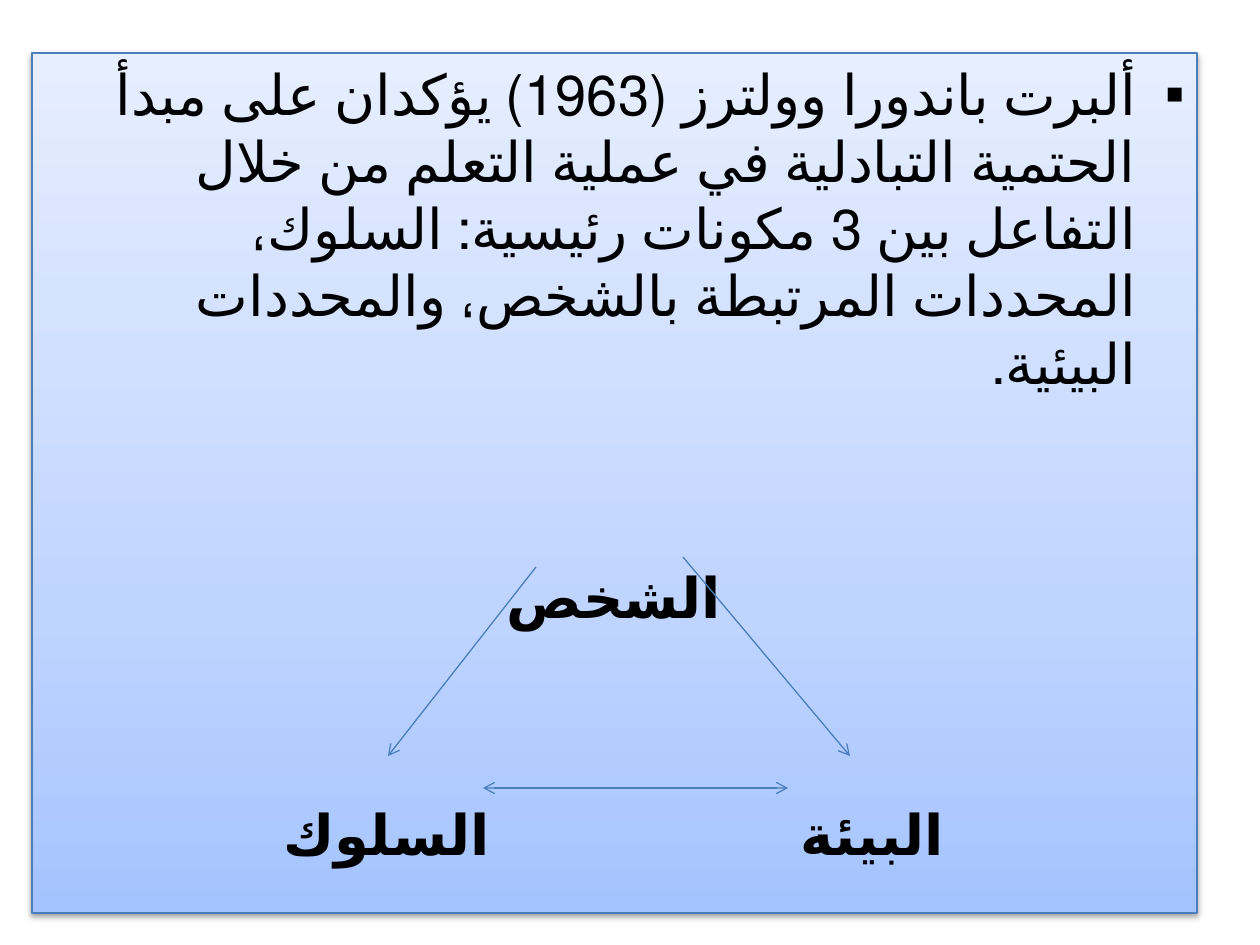
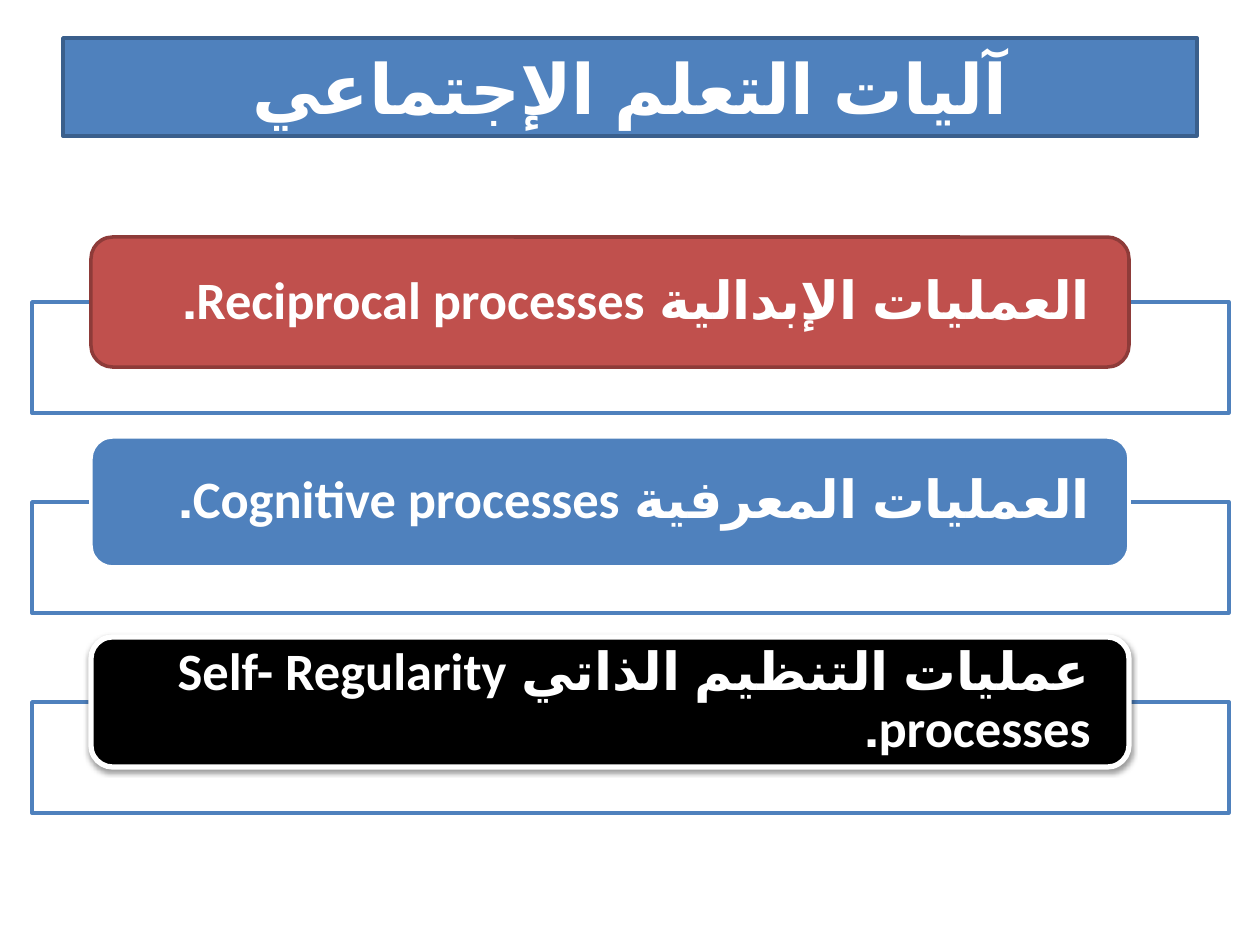
from copy import deepcopy

from lxml import etree
from pptx import Presentation
from pptx.dml.color import RGBColor
from pptx.enum.lang import MSO_LANGUAGE_ID
from pptx.enum.shapes import MSO_CONNECTOR, MSO_SHAPE
from pptx.enum.text import MSO_ANCHOR, PP_ALIGN
from pptx.oxml.ns import qn
from pptx.util import Emu, Pt

RECTANGLE = MSO_SHAPE.RECTANGLE
ROUNDED = MSO_SHAPE.ROUNDED_RECTANGLE
STRAIGHT = MSO_CONNECTOR.STRAIGHT
TOP, MIDDLE = MSO_ANCHOR.TOP, MSO_ANCHOR.MIDDLE
CENTER, RIGHT = PP_ALIGN.CENTER, PP_ALIGN.RIGHT
ARABIC = MSO_LANGUAGE_ID.ARABIC

PX_PER_INCH = 126
BLANK_LAYOUT = 6
BODY_FONT = "Calibri"
TITLE_FONT = "Arial"
BULLET_FONT = "Arial"

COLORS = {
    "black": "000000",
    "white": "FFFFFF",
    "blue": "4F81BD",
    "blue_edge": "3A5F8C",
    "thin_line": "4B7EBC",
    "red": "C0504D",
    "red_edge": "8E3B39",
    "panel_bottom": "A4C4FF",
    "panel_middle": "BFD4FF",
    "panel_top": "E6EEFF",
}

PANEL_STOPS = [(0, "panel_bottom"), (0.35, "panel_middle"), (1, "panel_top")]


def px(length):
    return Emu(round(length * 914400 / PX_PER_INCH))


def color(name):
    return RGBColor.from_string(COLORS[name])


def add_soft_shadow(shape):
    effects = shape._element.spPr.find(qn("a:effectLst"))
    shadow = etree.SubElement(effects, qn("a:outerShdw"), blurRad=str(Pt(3.1)),
                              dist=str(Pt(1.6)), dir="5400000", rotWithShape="0")
    tint = etree.SubElement(shadow, qn("a:srgbClr"), val=COLORS["black"])
    etree.SubElement(tint, qn("a:alpha"), val="38000")


def add_box(slide, box, fill, edge, edge_width, kind=RECTANGLE, shadow=False):
    shape = slide.shapes.add_shape(kind, *map(px, box))
    shape.shadow.inherit = False
    shape.fill.solid()
    shape.fill.fore_color.rgb = color(fill)
    shape.line.color.rgb = color(edge)
    shape.line.width = Pt(edge_width)
    if shadow:
        add_soft_shadow(shape)
    return shape


def fill_with_gradient(shape, stops):
    shape.fill.gradient()
    shape.fill.gradient_angle = 90
    stop_list = shape._element.spPr.find(qn("a:gradFill")).find(qn("a:gsLst"))
    stop_list.append(deepcopy(stop_list[0]))
    for stop, (position, name) in zip(shape.fill.gradient_stops, stops):
        stop.position = position
        stop.color.rgb = color(name)


def write(shape, text, size, ink, align=CENTER, anchor=MIDDLE, bold=False,
          font=BODY_FONT, bullet=None, spacing=None):
    frame = shape.text_frame
    frame.word_wrap = True
    frame.vertical_anchor = anchor
    paragraph = frame.paragraphs[0]
    properties = paragraph._p.get_or_add_pPr()
    properties.set("rtl", "1")
    if bullet:
        properties.set("marL", str(px(48)))
        properties.set("indent", str(px(-48)))
        etree.SubElement(properties, qn("a:buFont"), typeface=BULLET_FONT)
        etree.SubElement(properties, qn("a:buChar"), char=bullet)
    paragraph.alignment = align
    if spacing:
        paragraph.line_spacing = spacing
    run = paragraph.add_run()
    run.text = text
    run.font.size = Pt(size)
    run.font.bold = bold
    run.font.color.rgb = color(ink)
    run.font.name = font
    run.font.language_id = ARABIC


def add_factor(slide, text, center, top):
    width, height = 260, 80
    label = slide.shapes.add_textbox(px(center - width // 2), px(top), px(width), px(height))
    write(label, text, 32, "black", bold=True)


def add_arrow(slide, start, end, both_ways=False):
    arrow = slide.shapes.add_connector(STRAIGHT, *map(px, start + end))
    arrow.line.color.rgb = color("thin_line")
    arrow.line.width = Pt(0.75)
    properties = arrow._element.spPr
    line = properties.find(qn("a:ln"))
    if both_ways:
        etree.SubElement(line, qn("a:headEnd"), type="arrow")
    etree.SubElement(line, qn("a:tailEnd"), type="arrow")
    etree.SubElement(properties, qn("a:effectLst"))


def add_process(slide, row, text, fill, edge, edge_width, shadow):
    top = 237 + 200 * row
    add_box(slide, (32, top + 65, 1197, 111), "white", "blue", 2)
    card = add_box(slide, (91, top, 1038, 130), fill, edge, edge_width, ROUNDED, shadow)
    frame = card.text_frame
    frame.margin_left = frame.margin_right = px(32)
    frame.margin_top = frame.margin_bottom = 0
    write(card, text, 30, "white", RIGHT, bold=True, spacing=0.9)


def build_determinism_slide(slide):
    panel = add_box(slide, (32, 53, 1165, 860), "panel_middle", "thin_line", 0.75, shadow=True)
    fill_with_gradient(panel, PANEL_STOPS)
    write(panel,
          "ألبرت باندورا وولترز (1963) يؤكدان على مبدأ الحتمية التبادلية في عملية التعلم "
          "من خلال التفاعل بين 3 مكونات رئيسية: السلوك، المحددات المرتبطة بالشخص، "
          "والمحددات البيئية.",
          32, "black", RIGHT, TOP, bullet="▪")
    add_factor(slide, "الشخص", 614, 556)
    add_factor(slide, "البيئة", 872, 793)
    add_factor(slide, "السلوك", 387, 793)
    add_arrow(slide, (536, 567), (388, 756))
    add_arrow(slide, (683, 557), (850, 756))
    add_arrow(slide, (483, 788), (788, 788), both_ways=True)


def build_mechanisms_slide(slide):
    title = add_box(slide, (63, 38, 1134, 98), "blue", "blue_edge", 2)
    write(title, "آليات التعلم الإجتماعي", 39.6, "white", bold=True, font=TITLE_FONT)
    processes = [
        ("العمليات الإبدالية Reciprocal processes.", "red", "red_edge", 2, False),
        ("العمليات المعرفية Cognitive processes.", "blue", "white", 2, False),
        ("عمليات التنظيم الذاتي Self- Regularity processes.", "black", "white", 3, True),
    ]
    for row, process in enumerate(processes):
        add_process(slide, row, *process)


def main():
    presentation = Presentation()
    presentation.slide_width = px(1260)
    presentation.slide_height = px(945)
    layout = presentation.slide_layouts[BLANK_LAYOUT]
    for build in (build_determinism_slide, build_mechanisms_slide):
        build(presentation.slides.add_slide(layout))
    presentation.save("out.pptx")


if __name__ == "__main__":
    main()
